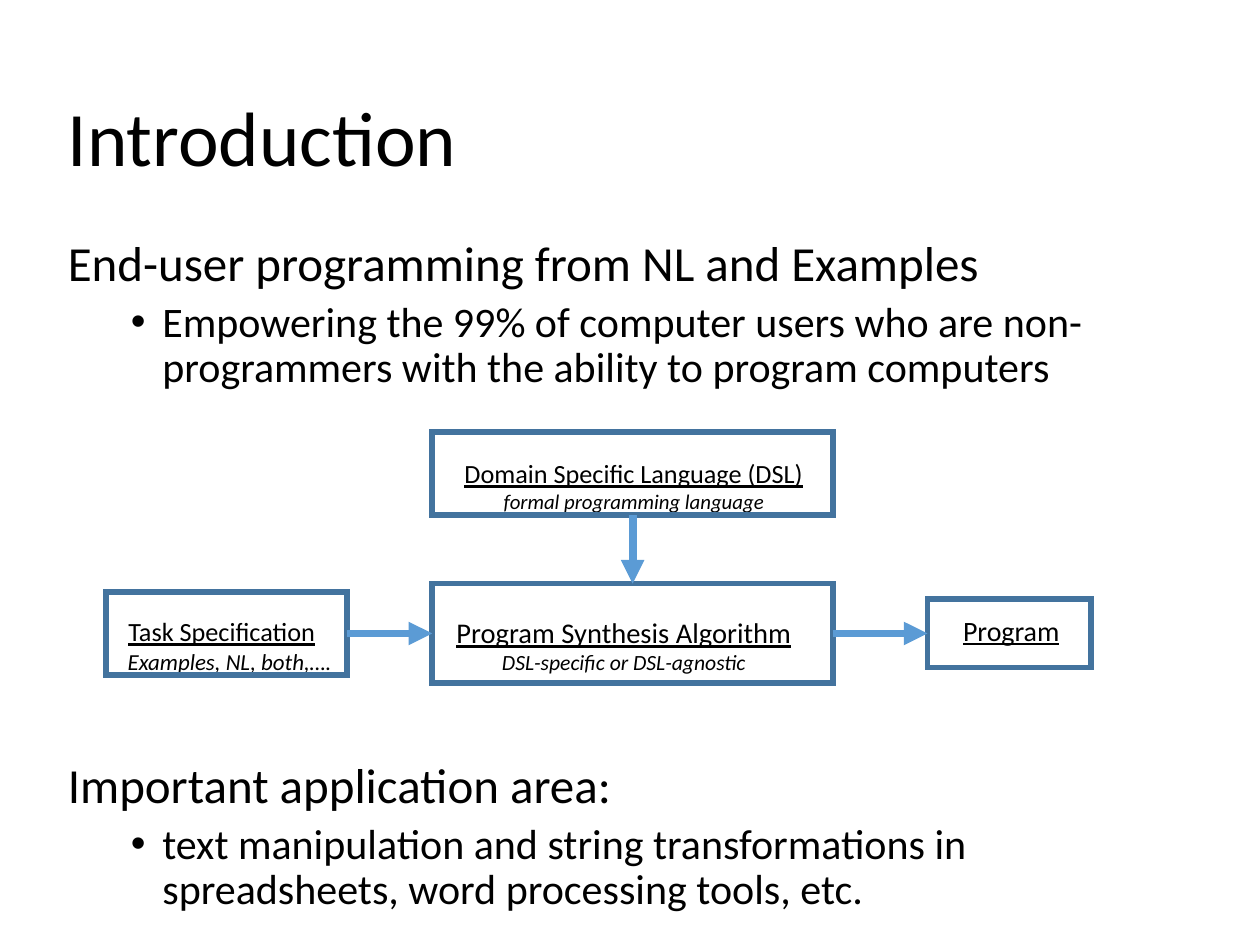
import lxml.etree
import pptx
import pptx.dml.color
import pptx.enum.shapes
import pptx.enum.text
import pptx.oxml.ns
import pptx.util

Pt = pptx.util.Pt
BLACK, BORDER, ARROW = "000000", "43739E", "5B9BD5"
CENTER = pptx.enum.text.PP_ALIGN.CENTER
HEADING = {"line_spacing": 0.9, "space_before": Pt(10)}
BULLET = {"line_spacing": 0.9, "space_before": Pt(5), "level": 1}


def color(value):
    """Turn a hex string into a colour."""
    return pptx.dml.color.RGBColor.from_string(value)


def add_element(parent, tag, **attributes):
    """Append a DrawingML element to a parent element."""
    name = pptx.oxml.ns.qn(tag)
    return lxml.etree.SubElement(parent, name, attributes)


def set_attributes(target, values):
    """Set every attribute named in a dict of format values."""
    for name, value in values.items():
        setattr(target, name, value)


def indent(paragraph, left, hanging=0):
    """Set the left margin and hanging indent of a paragraph."""
    properties = paragraph._p.get_or_add_pPr()
    properties.set("marL", str(Pt(left)))
    properties.set("indent", str(-Pt(hanging)))
    return properties


def add_paragraph(frame, text, font, layout):
    """Write text into the empty first paragraph or a new one."""
    paragraph = frame.paragraphs[0]
    if paragraph.runs:
        paragraph = frame.add_paragraph()
    set_attributes(paragraph, layout)
    run = paragraph.add_run()
    run.text = text
    set_attributes(run.font, {"name": "Calibri", **font})
    run.font.color.rgb = color(BLACK)
    return paragraph


def add_frame(slide, box, anchor=pptx.enum.text.MSO_ANCHOR.TOP):
    """Add a wrapping text box and return its text frame."""
    frame = slide.shapes.add_textbox(*map(Pt, box)).text_frame
    set_attributes(frame, {"word_wrap": True, "vertical_anchor": anchor})
    return frame


def add_title(slide, box, text):
    """Add the slide title, centred vertically in its box."""
    frame = add_frame(slide, box, pptx.enum.text.MSO_ANCHOR.MIDDLE)
    add_paragraph(frame, text, {"size": Pt(44)}, {"line_spacing": 0.9})


def add_topic(slide, box, heading, detail):
    """Add a heading with one bulleted detail below it."""
    frame = add_frame(slide, box)
    add_paragraph(frame, heading, {"size": Pt(28)}, HEADING)
    paragraph = add_paragraph(frame, detail, {"size": Pt(24)}, BULLET)
    properties = indent(paragraph, 54, 18)
    add_element(properties, "a:buFont", typeface="Arial")
    add_element(properties, "a:buChar", char="•")


def add_block(slide, box, label_box, name, size, note="", note_size=0, note_indent=0):
    """Add an outlined block and its label, placed relative to the block."""
    left, top, width, height = box
    offset_left, offset_top, label_width, label_height = label_box
    frame = add_frame(slide, (left + offset_left, top + offset_top, label_width, label_height))
    add_paragraph(frame, name, {"size": Pt(size), "underline": True}, {"alignment": CENTER})
    if note:
        font = {"size": Pt(note_size), "italic": True}
        paragraph = add_paragraph(frame, note, font, {"alignment": CENTER})
        indent(paragraph, note_indent)
    rectangle = pptx.enum.shapes.MSO_SHAPE.RECTANGLE
    shape = slide.shapes.add_shape(rectangle, *map(Pt, box))
    shape.shadow.inherit = False
    shape.fill.background()
    shape.line.color.rgb = color(BORDER)
    shape.line.width = Pt(3.25)
    add_element(shape.line._get_or_add_ln(), "a:miter", lim="800000")


def add_arrow(slide, start, end):
    """Add a straight arrow between two points."""
    straight = pptx.enum.shapes.MSO_CONNECTOR.STRAIGHT
    connector = slide.shapes.add_connector(straight, *map(Pt, start + end))
    connector.line.color.rgb = color(ARROW)
    connector.line.width = Pt(4.5)
    add_element(connector.line._get_or_add_ln(), "a:tailEnd", type="triangle")
    add_element(connector._element.spPr, "a:effectLst")


def add_diagram(slide, box):
    """Add the synthesis flow: language and task in, program out."""
    left, top, width, height = box
    middle = top + 115
    core_left, core_width = left + 186.5, 229
    core_center = core_left + core_width / 2
    language_height, core_height = 47.5, 57
    core_top = middle - core_height / 2
    task_width, program_width = 138, 93.5
    program_left = left + width - program_width

    add_block(slide, (core_left, top, core_width, language_height), (5, 10.8, 220.3, 50.4),
              "Domain Specific Language (DSL)", 15, "formal programming language", 11.9)
    add_block(slide, (left, middle - 23.8, task_width, 47.5), (-20.9, 10.1, 174.2, 35.3),
              "Task Specification", 15, "Examples, NL, both,….", 13.1, 9)
    add_block(slide, (core_left, core_top, core_width, core_height), (-19.4, 14.4, 257.8, 34.6),
              "Program Synthesis Algorithm", 16.3, "DSL-specific or DSL-agnostic", 12.4)
    add_block(slide, (program_left, middle - 19.5, program_width, 39), (-30.2, 4.3, 156.2, 30.2),
              "Program", 16)

    add_arrow(slide, (core_center, top + language_height), (core_center, core_top))
    add_arrow(slide, (left + task_width, middle), (core_left, middle))
    add_arrow(slide, (core_left + core_width, middle), (program_left, middle))


def main():
    """Build the introduction slide and save it."""
    presentation = pptx.Presentation()
    set_attributes(presentation, {"slide_width": Pt(720), "slide_height": Pt(540)})
    slide = presentation.slides.add_slide(presentation.slide_layouts[6])
    add_title(slide, (31.7, 28.8, 656.6, 104.4), "Introduction")
    add_topic(slide, (31.7, 133.2, 639.4, 100), "End-user programming from NL and Examples",
              "Empowering the 99% of computer users who are non-programmers "
              "with the ability to program computers")
    add_diagram(slide, (60.5, 247, 563, 143.5))
    add_topic(slide, (31.7, 431.5, 639.4, 97), "Important application area:",
              "text manipulation and string transformations in spreadsheets, "
              "word processing tools, etc.")
    presentation.save("out.pptx")


if __name__ == "__main__":
    main()
